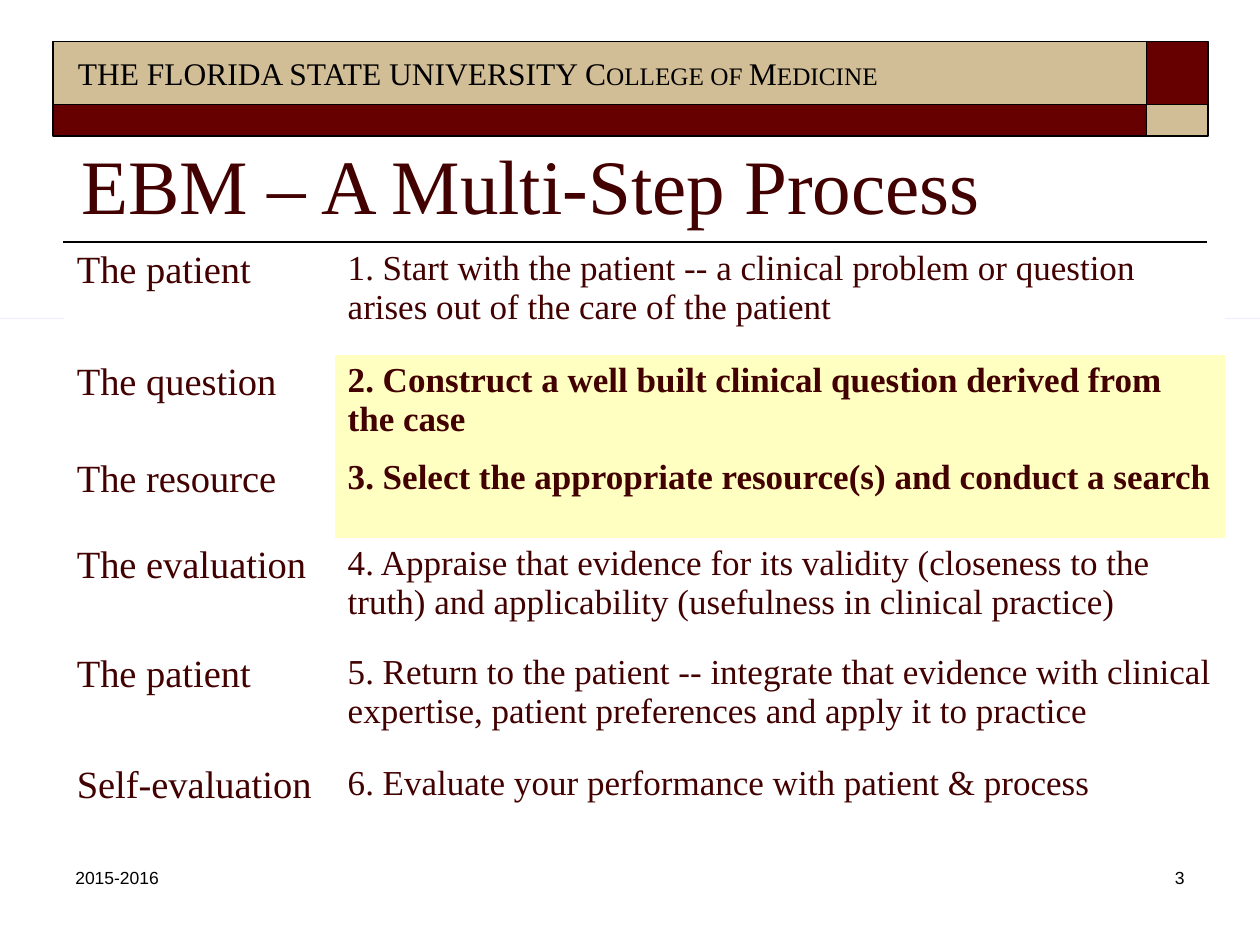
from pptx import Presentation as Deck
from pptx.dml.color import RGBColor as RGB
from pptx.enum.shapes import MSO_CONNECTOR as Conn, MSO_SHAPE as Kind
from pptx.enum.text import MSO_ANCHOR as Anchor, PP_ALIGN as Align
from pptx.util import Inches, Pt
from lxml import etree

SERIF, SANS = "Times New Roman", "Arial"
MAROON, TAN, INK = "660000", "D2BE96", "420000"
BLACK, WHITE, YELLOW = "000000", "FFFFFF", "FFFFC2"
NO_GRID = "{2D5ABB26-0587-4C30-8999-92F81FD0307C}"

STEPS = [
    (0.89, "The patient", "1. Start with the patient -- a clinical problem or question "
     "arises out of the care of the patient", False),
    (0.73, "The question", "2. Construct a well built clinical question derived from "
     "the case", True),
    (0.68, "The resource", "3. Select the appropriate resource(s) and conduct a search", True),
    (0.87, "The evaluation", "4. Appraise that evidence for its validity (closeness to the "
     "truth) and applicability (usefulness in clinical practice)", False),
    (0.88, "The patient", "5. Return to the patient -- integrate that evidence with clinical "
     "expertise, patient preferences and apply it to practice", False),
    (0.53, "Self-evaluation", "6. Evaluate your performance with patient & process", False),
]


def color(code):
    return RGB.from_string(code)


def paint(item, code):
    item.fill.solid()
    item.fill.fore_color.rgb = color(code)


def write(frame, text, size=20, font=SERIF, ink=INK, bold=False, caps=False, align=None):
    para = frame.paragraphs[0]
    if align is not None:
        para.alignment = align
    run = para.add_run()
    run.text = text
    run.font.size = Pt(size)
    run.font.name = font
    run.font.bold = bold
    run.font.color.rgb = color(ink)
    if caps:
        run.font._element.set("cap", "small")


def add_rect(slide, x, y, wide, high, fill, line=None):
    rect = slide.shapes.add_shape(
        Kind.RECTANGLE, Inches(x), Inches(y), Inches(wide), Inches(high))
    rect.shadow.inherit = False
    paint(rect, fill)
    if line:
        rect.line.color.rgb = color(line)
        rect.line.width = Pt(1)
    else:
        rect.line.fill.background()


def add_rule(slide, left, right, y):
    rule = slide.shapes.add_connector(
        Conn.STRAIGHT, Inches(left), Inches(y), Inches(right), Inches(y))
    rule.line.color.rgb = color(BLACK)
    rule.line.width = Pt(1)
    props = rule._element.spPr
    etree.SubElement(props, props.find("{*}ln").tag.replace("}ln", "}effectLst"))


def add_box(slide, x, y, wide, high, wrap=True, anchor=Anchor.TOP):
    box = slide.shapes.add_textbox(Inches(x), Inches(y), Inches(wide), Inches(high))
    frame = box.text_frame
    frame.word_wrap = wrap
    frame.vertical_anchor = anchor
    return frame


def add_band(slide):
    for y, high, left, right in ((0.33, 0.5, TAN, MAROON), (0.83, 0.25, MAROON, TAN)):
        add_rect(slide, 9.1, y, 0.49, high, right, BLACK)
        add_rect(slide, 0.42, y, 8.68, high, left, BLACK)
    frame = add_box(slide, 0.52, 0.38, 6.73, 0.4, wrap=False)
    write(frame, "THE FLORIDA STATE UNIVERSITY ", size=18, ink=BLACK)
    write(frame, "College of Medicine", size=18, ink=BLACK, caps=True)


def add_steps(slide):
    grid = slide.shapes.add_table(
        len(STEPS), 2, Inches(0.51), Inches(1.93), Inches(9.21), Inches(4.58)).table
    grid._tbl.tblPr[0].text = NO_GRID
    grid.first_row = grid.horz_banding = False
    for col, wide in zip(grid.columns, (2.15, 7.06)):
        col.width = Inches(wide)
    for row, (high, topic, step, focus) in zip(grid.rows, STEPS):
        row.height = Inches(high)
        name, task = row.cells
        paint(name, WHITE)
        paint(task, YELLOW if focus else WHITE)
        write(name.text_frame, topic, size=22)
        write(task.text_frame, step, bold=focus)


def main():
    deck = Deck()
    deck.slide_width, deck.slide_height = Inches(10), Inches(7.5)
    slide = deck.slides.add_slide(deck.slide_layouts[6])
    add_band(slide)
    add_rule(slide, 0.5, 9.58, 1.92)
    title = add_box(slide, 0.55, 0.62, 8.5, 1.25, anchor=Anchor.BOTTOM)
    write(title, "EBM – A Multi-Step Process", size=44)
    add_rect(slide, 0, 2.53, 10, 0, "CCCCFF")
    add_steps(slide)
    write(add_box(slide, 0.5, 6.83, 1.83, 0.5), "2015-2016", size=10, font=SANS, ink=BLACK)
    write(add_box(slide, 7.42, 6.83, 2.08, 0.5), "3", size=10, font=SANS, ink=BLACK,
          align=Align.RIGHT)
    deck.save("out.pptx")


if __name__ == "__main__":
    main()
